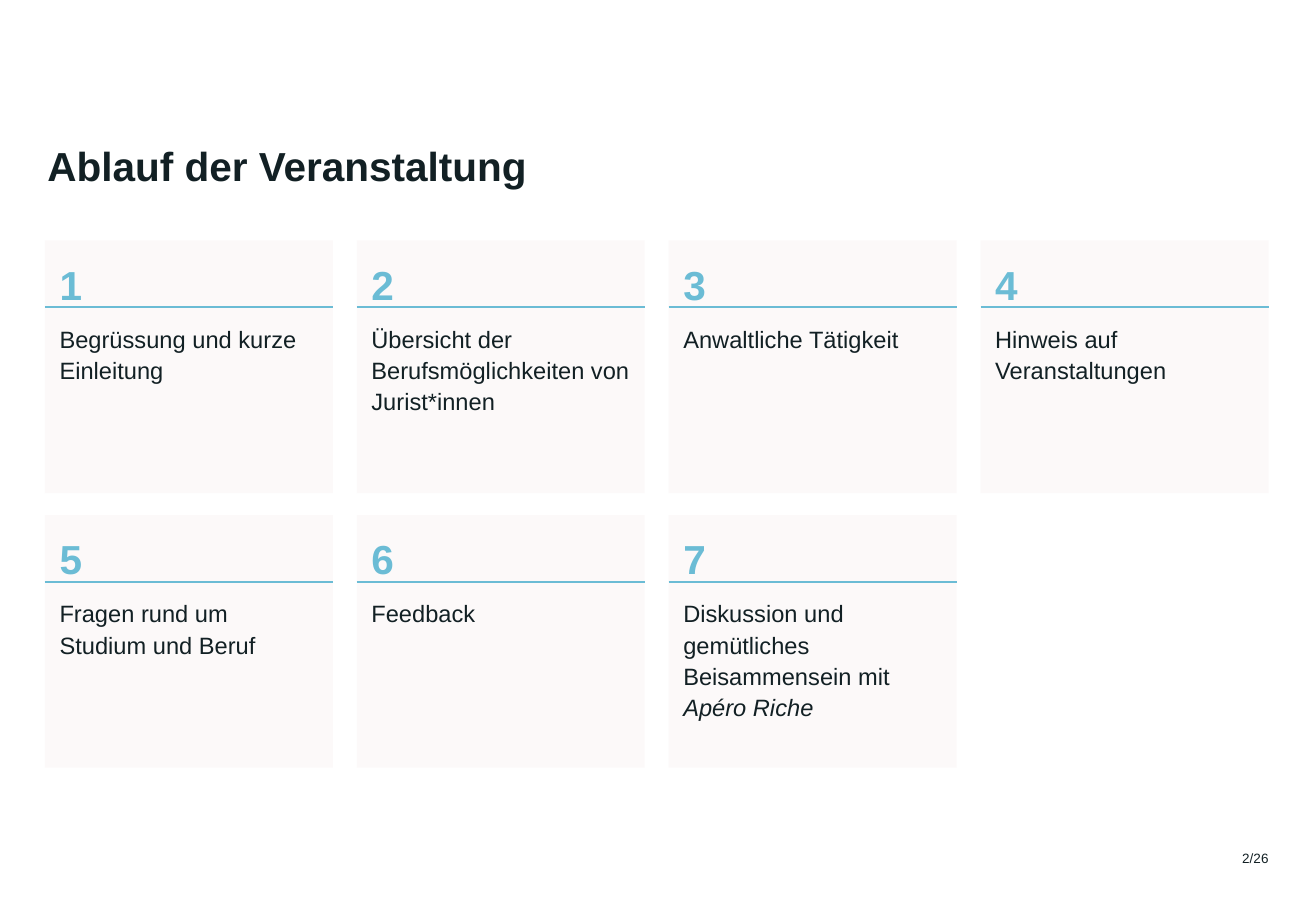
from lxml import etree
from pptx import Presentation
from pptx.dml.color import RGBColor
from pptx.enum.shapes import MSO_CONNECTOR, MSO_SHAPE
from pptx.enum.text import MSO_ANCHOR, PP_ALIGN
from pptx.oxml.ns import qn
from pptx.util import Inches, Pt

RECTANGLE = MSO_SHAPE.RECTANGLE
STRAIGHT = MSO_CONNECTOR.STRAIGHT
TOP, MIDDLE, BOTTOM = MSO_ANCHOR.TOP, MSO_ANCHOR.MIDDLE, MSO_ANCHOR.BOTTOM
LEFT, RIGHT = PP_ALIGN.LEFT, PP_ALIGN.RIGHT

TITLE = "Ablauf der Veranstaltung"
PAGE_NUMBER = "2/26"
# Each agenda item is a list of (text, italic) spans.
AGENDA = [
    [("Begrüssung und kurze Einleitung", False)],
    [("Übersicht der Berufsmöglichkeiten von Jurist*innen", False)],
    [("Anwaltliche Tätigkeit", False)],
    [("Hinweis auf Veranstaltungen", False)],
    [("Fragen rund um Studium und Beruf", False)],
    [("Feedback", False)],
    [("Diskussion und gemütliches Beisammensein mit ", False), ("Apéro Riche", True)],
]

FONT = "Arial"
COLORS = {"ink": "122024", "accent": "6BBCD5", "card": "FCF9F9"}

COLUMNS = 4
GRID_LEFT, GRID_RIGHT, GRID_TOP = 0.37, 10.44, 1.98
CARD_WIDTH, HEADER_HEIGHT, BODY_HEIGHT = 2.37, 0.55, 1.53
COLUMN_STEP = (GRID_RIGHT - GRID_LEFT - CARD_WIDTH) / (COLUMNS - 1)
ROW_STEP = 2.26
CARD_INSET = 0.12


def color(name):
    return RGBColor.from_string(COLORS[name])


def write(shape, spans, size, ink="ink", bold=False, align=LEFT, anchor=TOP,
          inset=0, spacing=1.0, after=0):
    """Fill a shape with one paragraph of (text, italic) spans."""
    frame = shape.text_frame
    frame.word_wrap = True
    frame.vertical_anchor = anchor
    frame.margin_left = frame.margin_right = Inches(inset)
    frame.margin_top = frame.margin_bottom = Inches(inset)
    para = frame.paragraphs[0]
    para.alignment = align
    para.line_spacing = spacing
    para.space_before = Pt(0)
    para.space_after = Pt(after)
    for text, italic in spans:
        span = para.add_run()
        span.text = text
        span.font.name = FONT
        span.font.size = Pt(size)
        span.font.bold = bold
        span.font.italic = italic
        span.font.color.rgb = color(ink)


def add_panel(group, left, top, height):
    panel = group.shapes.add_shape(
        RECTANGLE, Inches(left), Inches(top), Inches(CARD_WIDTH), Inches(height))
    panel.shadow.inherit = False
    panel.fill.solid()
    panel.fill.fore_color.rgb = color("card")
    panel.line.fill.background()
    return panel


def add_card(page, index, spans):
    row, column = divmod(index, COLUMNS)
    left = GRID_LEFT + column * COLUMN_STEP
    top = GRID_TOP + row * ROW_STEP
    middle = top + HEADER_HEIGHT
    group = page.shapes.add_group_shape()

    body = add_panel(group, left, middle, BODY_HEIGHT)
    write(body, spans, 14, inset=CARD_INSET, spacing=1.1, after=3)
    header = add_panel(group, left, top, HEADER_HEIGHT)
    write(header, [(str(index + 1), False)], 24, ink="accent", bold=True,
          inset=CARD_INSET, spacing=1.1, after=6)

    rule = group.shapes.add_connector(
        STRAIGHT, Inches(left), Inches(middle), Inches(left + CARD_WIDTH), Inches(middle))
    rule.line.color.rgb = color("accent")
    rule.line.width = Pt(1)
    etree.SubElement(rule._element.spPr, qn("a:effectLst"))


def main():
    deck = Presentation()
    deck.slide_width, deck.slide_height = Inches(10.83), Inches(7.5)
    page = deck.slides.add_slide(deck.slide_layouts[5])

    title = page.shapes.title
    title.left, title.top = Inches(0.39), Inches(1.18)
    title.width, title.height = Inches(7.4), Inches(0.39)
    write(title, [(TITLE, False)], 24, bold=True, anchor=BOTTOM, spacing=0.9)

    number = page.shapes.add_textbox(Inches(9.94), Inches(6.97), Inches(0.5), Inches(0.19))
    write(number, [(PAGE_NUMBER, False)], 8, align=RIGHT, anchor=MIDDLE)

    for index, spans in enumerate(AGENDA):
        add_card(page, index, spans)

    deck.save("out.pptx")


if __name__ == "__main__":
    main()
